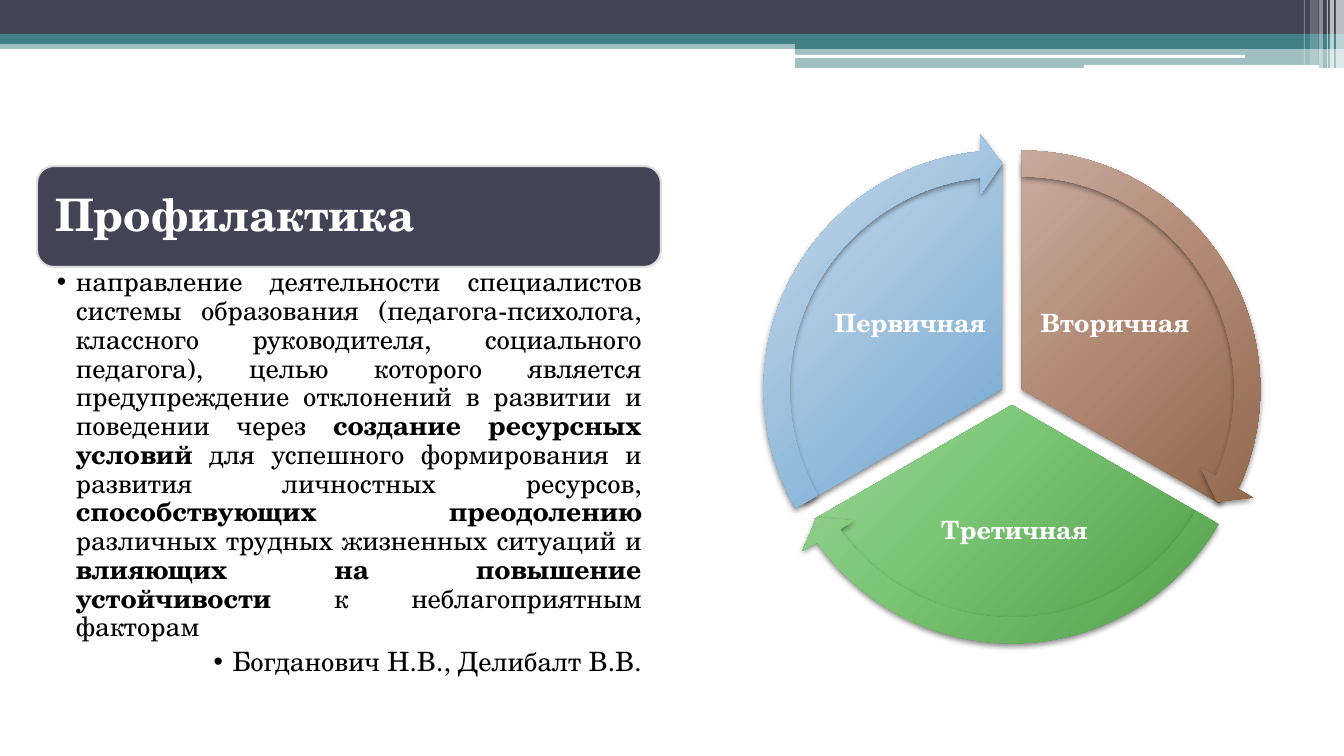
from lxml.etree import SubElement
from pptx import Presentation
from pptx.dml.color import RGBColor
from pptx.enum.shapes import MSO_SHAPE
from pptx.enum.text import MSO_ANCHOR, MSO_AUTO_SIZE, PP_ALIGN
from pptx.oxml.ns import qn
from pptx.util import Pt

# Content
FONT = "TeX Gyre Schola"
TITLE = "Профилактика"
BODY = [
    (PP_ALIGN.JUSTIFY, [
        ("направление деятельности специалистов системы образования "
         "(педагога-психолога, классного руководителя, социального педагога), "
         "целью которого является предупреждение отклонений в развитии "
         "и поведении через ", False),
        ("создание ресурсных условий", True),
        (" для успешного формирования и развития личностных ресурсов, ", False),
        ("способствующих преодолению ", True),
        ("различных трудных жизненных ситуаций и ", False),
        ("влияющих на повышение устойчивости", True),
        (" к неблагоприятным факторам", False),
    ]),
    (PP_ALIGN.RIGHT, [("Богданович Н.В., Делибалт В.В.", False)]),
]
# Name, label box, centre, pie angles, arrow adjustments, gradient colours
STAGES = [
    ("Вторичная", (1034, 257, 162, 135), (1022, 389), (162, 18),
     (14.725, 161.994), ("DBCCC6", "B18874", "825739")),
    ("Третичная", (893, 472, 243, 119), (1012, 405), (18, 90),
     (86.72, 18.005), ("C7E4C5", "7AC675", "4C9844")),
    ("Первичная", (829, 257, 162, 135), (1002, 389), (90, 162),
     (158.73, 90), ("C7D9EA", "7CADD4", "5688A9")),
]
PIE, RING = 455, 511

# Header bars: box, colour, opacity in percent
DARK, TEAL, WHITE = "424456", "438086", "FFFFFF"
BARS = [
    ((0, 40, 1344, 9), TEAL, 50),
    ((0, 0, 1344, 34), DARK, 100),
    ((0, 34, 1344, 10), TEAL, 100),
    ((795, 39, 549, 10), TEAL, 100),
    ((795, 48, 549, 20), TEAL, 50),
]
SLITS = [(794, 55, 451, 3), (1084, 65, 235, 4)]
# Stripes at the right edge: left, width, height, opacity
STRIPES = [(1336, 8, 69, 65), (1330, 4, 69, 65), (1327, 1, 69, 60),
           (1319, 4, 69, 40), (1310, 8, 65, 20), (1304, 1, 65, 30)]

SCALE = 914400 / 100.8


def px(n):
    return round(n * SCALE)


def rgb(code):
    return RGBColor.from_string(code)


def node(parent, tag, **attrs):
    return SubElement(parent, qn(tag), {k: str(v) for k, v in attrs.items()})


def tint(parent, code, alpha=100):
    clr = node(parent, "a:srgbClr", val=code)
    if alpha < 100:
        node(clr, "a:alpha", val=alpha * 1000)


def add(kind, box, code, alpha=100):
    shape = slide.shapes.add_shape(kind, *map(px, box))
    shape.shadow.inherit = False
    shape.line.fill.background()
    shape.fill.solid()
    shape.fill.fore_color.rgb = rgb(code)
    if alpha < 100:
        clr = shape.fill._xPr.find(qn("a:solidFill"))[0]
        node(clr, "a:alpha", val=alpha * 1000)
    return shape


def sector(kind, mid, size, adjs, codes):
    left, top = (c - size / 2 for c in mid)
    shape = add(kind, (left, top, size, size), codes[0])
    for i, adj in enumerate(adjs):
        shape.adjustments[i] = adj
    # Radial gradient
    props = shape._element.spPr
    solid = props.find(qn("a:solidFill"))
    grad = node(props, "a:gradFill", rotWithShape=1)
    props.replace(solid, grad)
    stops = node(grad, "a:gsLst")
    for pos, code in zip((0, 55, 100), codes):
        tint(node(stops, "a:gs", pos=pos * 1000), code)
    way = node(grad, "a:path", path="circle")
    node(way, "a:fillToRect", l=-40000, t=-90000, r=140000, b=190000)
    # Soft shadow below
    shade = node(props.find(qn("a:effectLst")), "a:outerShdw",
                 blurRad=Pt(4), dist=Pt(2), dir=5400000, rotWithShape=0)
    tint(shade, "000000", 45)


def setup(shape, box, pads, anchor):
    shape.left, shape.top, shape.width, shape.height = map(px, box)
    frame = shape.text_frame
    frame.word_wrap = True
    frame.auto_size = MSO_AUTO_SIZE.NONE
    frame.vertical_anchor = anchor
    (frame.margin_left, frame.margin_top,
     frame.margin_right, frame.margin_bottom) = map(px, pads)
    return frame


def write(para, runs, size, code, align):
    para.alignment = align
    para.line_spacing = 0.9
    for text, bold in runs:
        run = para.add_run()
        run.text = text
        font = run.font
        font.name, font.size, font.bold = FONT, Pt(size), bold
        font.color.rgb = rgb(code)


deck = Presentation()
deck.slide_width, deck.slide_height = px(1344), px(756)
slide = deck.slides.add_slide(deck.slide_layouts[5])

# Header band
for box, code, alpha in BARS:
    add(MSO_SHAPE.RECTANGLE, box, code, alpha)
for box in SLITS:
    add(MSO_SHAPE.ROUNDED_RECTANGLE, box, WHITE)
for left, width, height, alpha in STRIPES:
    add(MSO_SHAPE.RECTANGLE, (left, 0, width, height), WHITE, alpha)

# Title on its plate
plate = add(MSO_SHAPE.ROUNDED_RECTANGLE, (37, 166, 624, 101), DARK)
plate.line.color.rgb = rgb("DEDEDE")
plate.line.width = Pt(1.5)
title = slide.shapes.title
plate._element.addnext(title._element)
frame = setup(title, (42, 171, 614, 91), [13] * 4, MSO_ANCHOR.MIDDLE)
write(frame.paragraphs[0], [(TITLE, True)], 32, WHITE, PP_ALIGN.JUSTIFY)

# Definition
box = (37, 266, 624, 394)
frame = setup(slide.shapes.add_textbox(0, 0, 0, 0), box, (20, 3, 19, 3),
              MSO_ANCHOR.TOP)
for i, (align, runs) in enumerate(BODY):
    para = frame.add_paragraph() if i else frame.paragraphs[0]
    write(para, runs, 19, "000000", align)
    para.level = 1
    para.space_after = Pt(4)
    props = para._p.get_or_add_pPr()
    props.set("marL", str(px(19)))
    props.set("indent", str(px(-19)))
    node(props, "a:buFont", typeface="Arial")
    node(props, "a:buChar", char="•")

# Cycle: slices with labels, then arrows on top
for name, box, mid, span, turn, codes in STAGES:
    sector(MSO_SHAPE.PIE, mid, PIE, span, codes)
    frame = setup(slide.shapes.add_textbox(0, 0, 0, 0), box, [3] * 4,
                  MSO_ANCHOR.MIDDLE)
    write(frame.paragraphs[0], [(name, True)], 18, WHITE, PP_ALIGN.CENTER)
for name, box, mid, span, turn, codes in STAGES:
    adjs = (0.051, 3.275, *turn, 0.059)
    sector(MSO_SHAPE.CIRCULAR_ARROW, mid, RING, adjs, codes)

deck.save("out.pptx")
